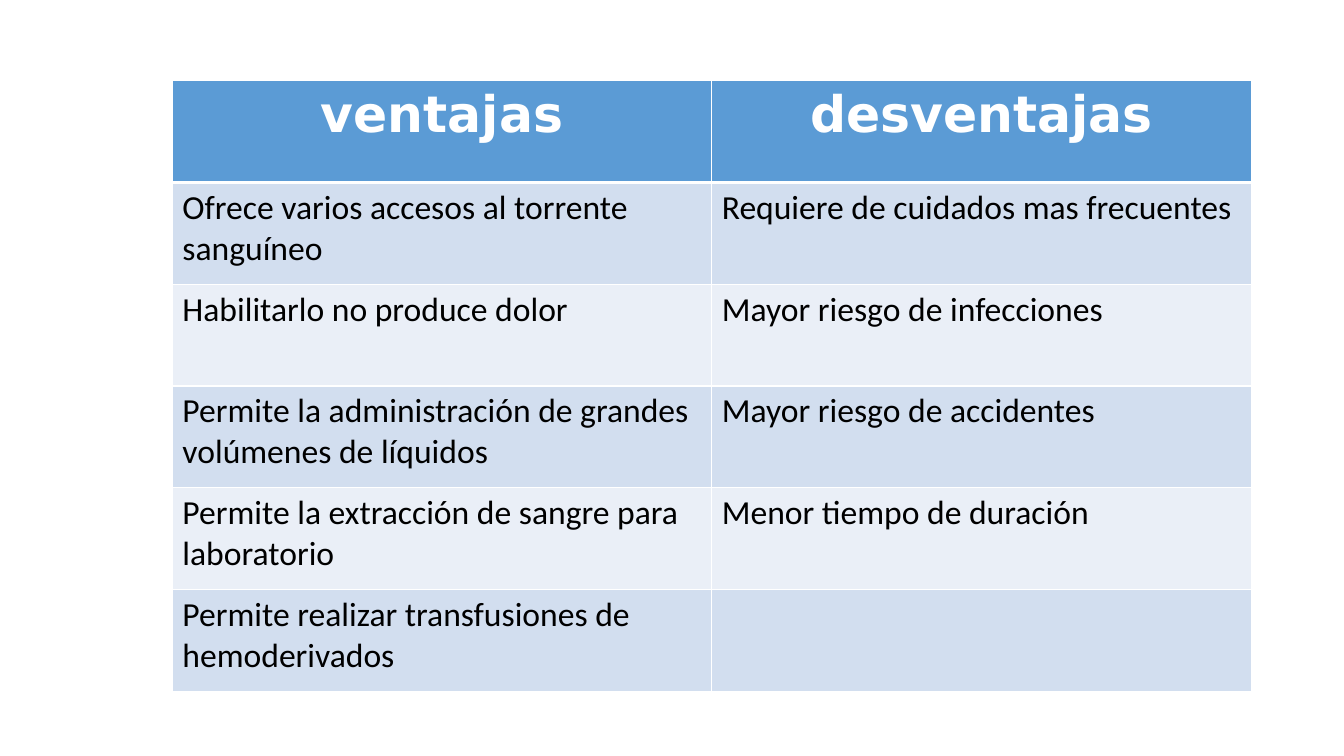
from dataclasses import dataclass

from lxml.etree import SubElement
from pptx import Presentation
from pptx.dml.color import RGBColor as RGB
from pptx.enum.text import PP_ALIGN as Align
from pptx.oxml.ns import qn
from pptx.util import Inches, Pt


@dataclass(frozen=True)
class Theme:
    header_fill: str = "5B9BD5"
    bands: tuple = ("D2DEEF", "EAEFF7")
    border: str = "FFFFFF"
    header_text: str = "FFFFFF"
    body_text: str = "000000"
    header_font: str = "DejaVu Sans"
    body_font: str = "Calibri"
    header_size: int = 36
    body_size: int = 24
    thin: int = 1
    thick: int = 3


class SlideBuilder:
    def __init__(self, slide, theme):
        self.s = slide
        self.theme = theme

    def borders(self, cell, top, bottom):
        """Draw all four cell edges; top and bottom are widths in points."""
        t = self.theme
        tc_pr = cell._tc.get_or_add_tcPr()
        widths = {"a:lnL": t.thin, "a:lnR": t.thin, "a:lnT": top, "a:lnB": bottom}
        for tag, width in widths.items():
            ln = SubElement(tc_pr, qn(tag), w=str(Pt(width)))
            fill = SubElement(ln, qn("a:solidFill"))
            SubElement(fill, qn("a:srgbClr"), val=t.border)

    def cell(self, cell, text, row):
        t = self.theme
        header = row == 0
        self.borders(cell, top=t.thick if row == 1 else t.thin,
                     bottom=t.thick if header else t.thin)
        cell.fill.solid()
        color = t.header_fill if header else t.bands[(row - 1) % 2]
        cell.fill.fore_color.rgb = RGB.from_string(color)
        cell.text_frame.text = text
        p = cell.text_frame.paragraphs[0]
        p.alignment = Align.CENTER if header else Align.LEFT
        p.font.size = Pt(t.header_size if header else t.body_size)
        for r in p.runs:
            r.font.size = p.font.size
            r.font.name = t.header_font if header else t.body_font
            r.font.bold = header
            r.font.color.rgb = RGB.from_string(t.header_text if header else t.body_text)

    def table(self, rows, left, top, col_width, row_height):
        n_rows, n_cols = len(rows), len(rows[0])
        table = self.s.shapes.add_table(
            n_rows, n_cols, Inches(left), Inches(top),
            Inches(col_width * n_cols), Inches(row_height * n_rows)).table
        for i, row in enumerate(rows):
            for j, text in enumerate(row):
                self.cell(table.cell(i, j), text, i)


ROWS = [
    ("ventajas", "desventajas"),
    ("Ofrece varios accesos al torrente sanguíneo", "Requiere de cuidados mas frecuentes"),
    ("Habilitarlo no produce dolor", "Mayor riesgo de infecciones"),
    ("Permite la administración de grandes volúmenes de líquidos", "Mayor riesgo de accidentes"),
    ("Permite la extracción de sangre para laboratorio", "Menor tiempo de duración"),
    ("Permite realizar transfusiones de hemoderivados", ""),
]


def main():
    prs = Presentation()
    prs.slide_width, prs.slide_height = Inches(13.33), Inches(7.5)
    s = prs.slides.add_slide(prs.slide_layouts[6])
    SlideBuilder(s, Theme()).table(ROWS, left=1.71, top=0.8, col_width=5.35, row_height=1.01)
    prs.save("out.pptx")


if __name__ == "__main__":
    main()
